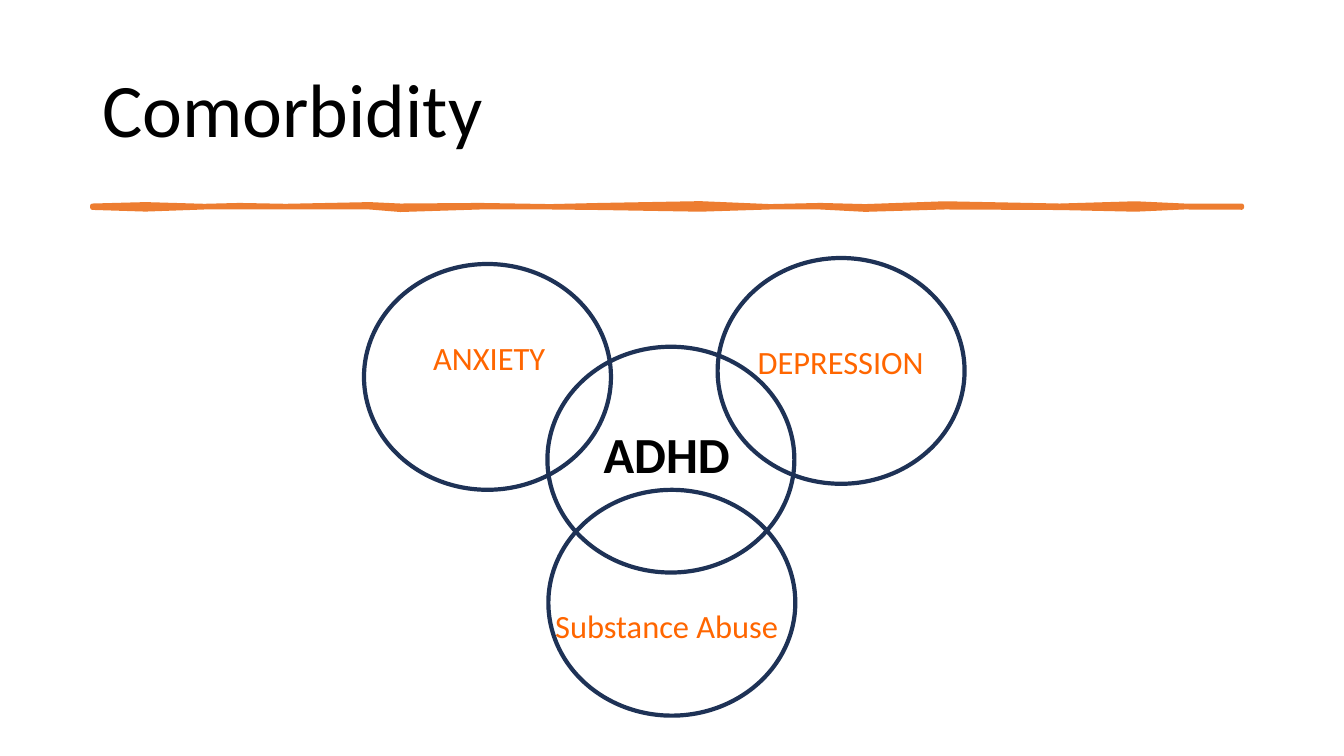
from pptx import Presentation
from pptx import util as u
from pptx.dml import color
from pptx.enum import shapes, text

Pt = u.Pt


def paint(target, hex_color):
    target.solid()
    target.fore_color.rgb = color.RGBColor.from_string(hex_color)


def add_label(wording, left, top, width, height, size, hex_color):
    box = slide.shapes.add_textbox(Pt(left), Pt(top), Pt(width), Pt(height))
    box.text_frame.word_wrap = True
    paragraph = box.text_frame.paragraphs[0]
    paragraph.text = wording
    paragraph.font.size = Pt(size)
    paragraph.font.name = "Calibri"
    paint(paragraph.font.fill, hex_color)
    return box.text_frame


prs = Presentation()
prs.slide_width, prs.slide_height = Pt(960), Pt(540)
slide = prs.slides.add_slide(prs.slide_layouts[6])

heading = add_label("Comorbidity", 66, 28.8, 828, 104.4, 54, "000000")
heading.vertical_anchor = text.MSO_ANCHOR.MIDDLE
heading.paragraphs[0].line_spacing = 0.9

brush_profile = [
    (66, 147, 148.3), (104, 146, 149.5), (146, 147.2, 148), (171, 146.6, 148),
    (204, 147.2, 148), (264, 146, 148), (286, 147, 149.8), (343, 146.6, 148),
    (393, 147.4, 148), (429, 146.6, 148.4), (500, 145.3, 149.6), (550, 147.4, 148),
    (586, 146.6, 148), (618, 147.4, 149.7), (675, 145.4, 148), (757, 147, 148.4),
    (811, 145.4, 149.6), (846, 147, 148), (887, 147, 148.2),
]
top_edge = [(x, top) for x, top, bottom in brush_profile]
bottom_edge = [(x, bottom) for x, top, bottom in reversed(brush_profile)]
outline = [(Pt(x), Pt(y)) for x, y in top_edge + bottom_edge]
builder = slide.shapes.build_freeform(*outline[0])
builder.add_line_segments(outline[1:], close=True)
brush_stroke = builder.convert_to_shape()
brush_stroke.shadow.inherit = False
paint(brush_stroke.fill, "ED7D31")
paint(brush_stroke.line.fill, "ED7D31")
brush_stroke.line.width = Pt(3.25)

for left, top in [(391, 247.7), (260, 188.6), (512.6, 184.3), (391.7, 349.9)]:
    circle = slide.shapes.add_shape(
        shapes.MSO_SHAPE.OVAL, Pt(left), Pt(top), Pt(176.4), Pt(161.3))
    circle.shadow.inherit = False
    circle.fill.background()
    paint(circle.line.fill, "1E3256")
    circle.line.width = Pt(3)

center = add_label("ADHD", 372.2, 298.8, 208.1, 51.1, 36.1, "000000").paragraphs[0]
center.font.bold = True
center.alignment = text.PP_ALIGN.CENTER
center.space_after = Pt(6)

for condition, left, top, width in [
    ("ANXIETY", 302.4, 237.6, 103),
    ("DEPRESSION", 534.2, 240.5, 161.3),
    ("Substance Abuse", 389.5, 429.1, 192.2),
]:
    label = add_label(condition, left, top, width, 35.3, 23.2, "FF6600")
    label.paragraphs[0].space_after = Pt(6)

prs.save("out.pptx")
